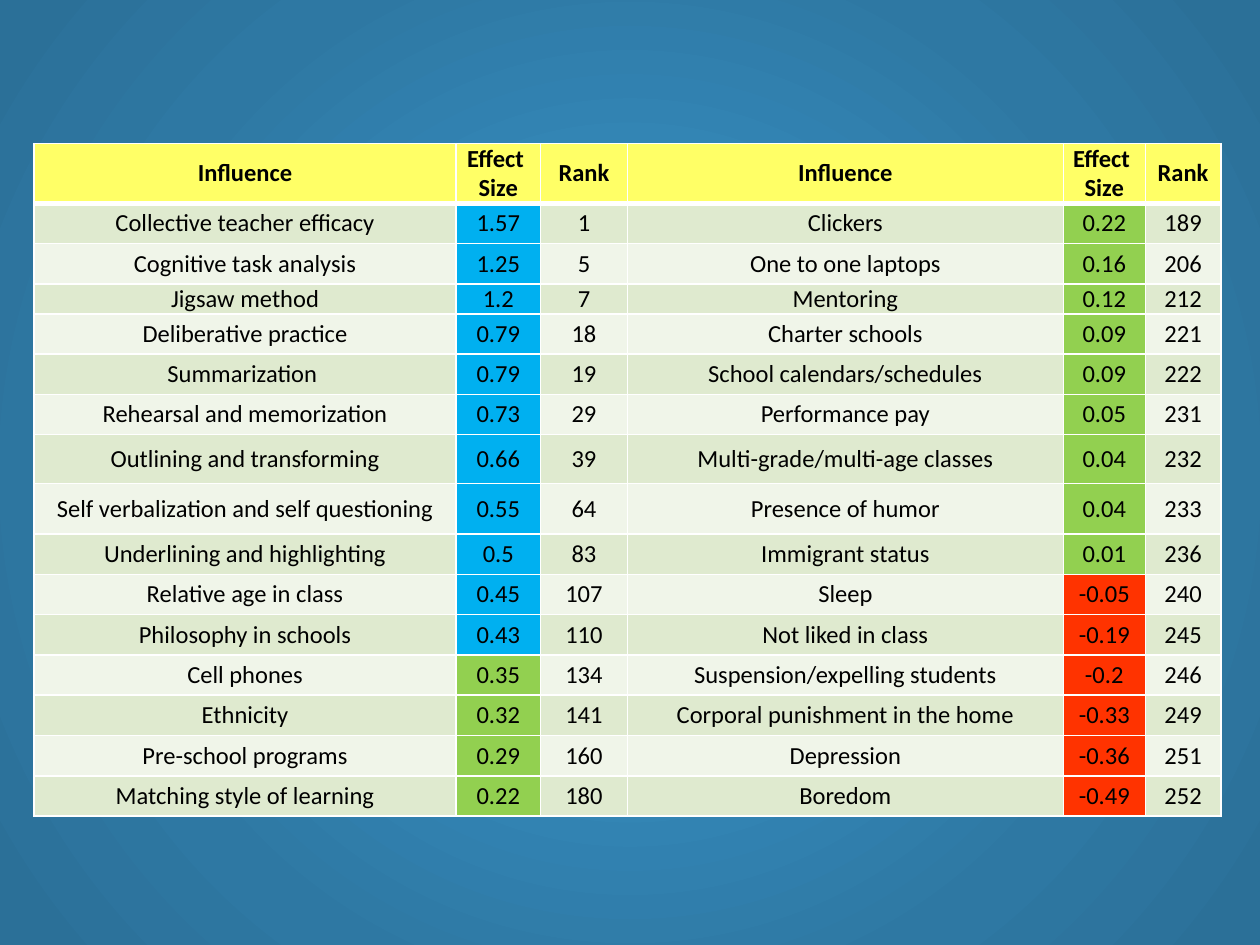
from pptx import Presentation
from pptx import util as u
from pptx.dml.color import RGBColor
from pptx.enum import text
from pptx.oxml import parse_xml
from pptx.oxml.ns import nsdecls, qn

HEADINGS = ["Influence", "Effect \vSize", "Rank"] * 2
INFLUENCES = [
    ("Collective teacher efficacy", "1.57", "1", "Clickers", "0.22", "189"),
    ("Cognitive task analysis", "1.25", "5", "One to one laptops", "0.16", "206"),
    ("Jigsaw method", "1.2", "7", "Mentoring", "0.12", "212"),
    ("Deliberative practice", "0.79", "18", "Charter schools", "0.09", "221"),
    ("Summarization ", "0.79", "19", "School calendars/schedules", "0.09", "222"),
    ("Rehearsal and memorization", "0.73", "29", "Performance pay", "0.05", "231"),
    ("Outlining and transforming", "0.66", "39", "Multi-grade/multi-age classes", "0.04", "232"),
    ("Self verbalization and self questioning", "0.55", "64", "Presence of humor", "0.04", "233"),
    ("Underlining and highlighting", "0.5", "83", "Immigrant status", "0.01", "236"),
    ("Relative age in class", "0.45", "107", "Sleep", "-0.05", "240"),
    ("Philosophy in schools", "0.43", "110", "Not liked in class", "-0.19", "245"),
    ("Cell phones", "0.35", "134", "Suspension/expelling students", "-0.2", "246"),
    ("Ethnicity", "0.32", "141", "Corporal punishment in the home", "-0.33", "249"),
    ("Pre-school programs", "0.29", "160", "Depression", "-0.36", "251"),
    ("Matching style of learning", "0.22", "180", "Boredom", "-0.49", "252"),
]
EFFECT_COLUMNS = (1, 4)
HIGH_EFFECT = 0.4

THEME = {
    "font": "Calibri", "size": 14, "text": "000000",
    "header": "FFFF66", "bands": ("F0F5E9", "DFEACF"),
    "high": "00B0F0", "low": "92D050", "negative": "FF3300",
    "border": "FFFFFF", "line": 1, "header_line": 3,
    "backdrop": [(0, "368EC1"), (23, "368EC1"), (69, "2E78A3"), (97, "2B7098")],
}

LEFT, TOP = 0.27, 1.14
COLUMN_WIDTHS = [3.35, 0.67, 0.69, 3.46, 0.65, 0.6]
ROW_HEIGHT = 0.32
SPECIAL_HEIGHTS = {0: 0.45, 3: 0.23, 7: 0.39, 8: 0.4}


def paint_backdrop(page):
    stops = "".join(
        f'<a:gs pos="{position * 1000}"><a:srgbClr val="{color}"/></a:gs>'
        for position, color in THEME["backdrop"])
    backdrop = parse_xml(
        f'<p:bg {nsdecls("p", "a")}><p:bgPr><a:gradFill rotWithShape="1">'
        f'<a:gsLst>{stops}</a:gsLst><a:path path="circle">'
        '<a:fillToRect l="50000" t="50000" r="50000" b="50000"/></a:path>'
        '</a:gradFill><a:effectLst/></p:bgPr></p:bg>')
    page.element.find(qn("p:cSld")).insert(0, backdrop)


def cell_color(row, column, value):
    """Header colour, effect-size colour, or the row's band."""
    if row == 0:
        return THEME["header"]
    if column not in EFFECT_COLUMNS:
        return THEME["bands"][row % 2]
    effect = float(value)
    if effect < 0:
        return THEME["negative"]
    return THEME["high" if effect > HIGH_EFFECT else "low"]


def add_borders(cell, is_header):
    properties = cell._tc.get_or_add_tcPr()
    for side in "LRTB":
        heavy = is_header and side == "B"
        points = THEME["header_line" if heavy else "line"]
        properties.append(parse_xml(
            f'<a:ln{side} {nsdecls("a")} w="{u.Pt(points)}"><a:solidFill>'
            f'<a:srgbClr val="{THEME["border"]}"/></a:solidFill></a:ln{side}>'))


def format_cell(cell, row, column, value):
    is_header = row == 0
    cell.text = value
    cell.vertical_anchor = text.MSO_ANCHOR.MIDDLE
    for side in ("left", "right", "top", "bottom"):
        setattr(cell, f"margin_{side}", 0)
    add_borders(cell, is_header)
    cell.fill.solid()
    cell.fill.fore_color.rgb = RGBColor.from_string(cell_color(row, column, value))
    font_values = {"name": THEME["font"], "size": u.Pt(THEME["size"]), "bold": is_header}
    for para in cell.text_frame.paragraphs:
        para.alignment = text.PP_ALIGN.CENTER
        for span in para.runs:
            for name, setting in font_values.items():
                setattr(span.font, name, setting)
            span.font.color.rgb = RGBColor.from_string(THEME["text"])


def add_influence_table(page):
    rows = [HEADINGS, *INFLUENCES]
    heights = [SPECIAL_HEIGHTS.get(row, ROW_HEIGHT) for row in range(len(rows))]
    table = page.shapes.add_table(
        len(rows), len(HEADINGS), u.Inches(LEFT), u.Inches(TOP),
        u.Inches(sum(COLUMN_WIDTHS)), u.Inches(sum(heights))).table
    for column, width in zip(table.columns, COLUMN_WIDTHS):
        column.width = u.Inches(width)
    for row, height in zip(table.rows, heights):
        row.height = u.Inches(height)
    for row, values in enumerate(rows):
        for column, value in enumerate(values):
            format_cell(table.cell(row, column), row, column, value)


def main():
    deck = Presentation()
    deck.slide_width, deck.slide_height = u.Inches(10), u.Inches(7.5)
    page = deck.slides.add_slide(deck.slide_layouts[6])
    paint_backdrop(page)
    add_influence_table(page)
    deck.save("out.pptx")


if __name__ == "__main__":
    main()
